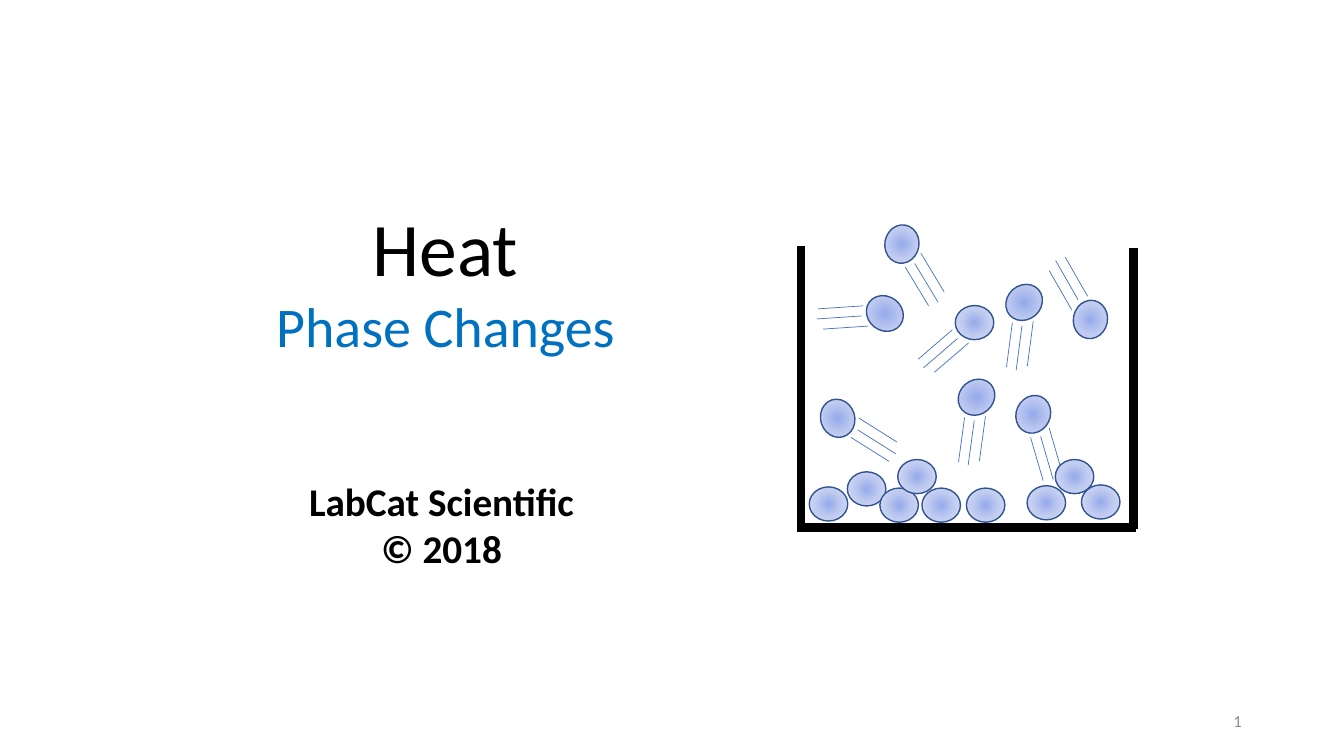
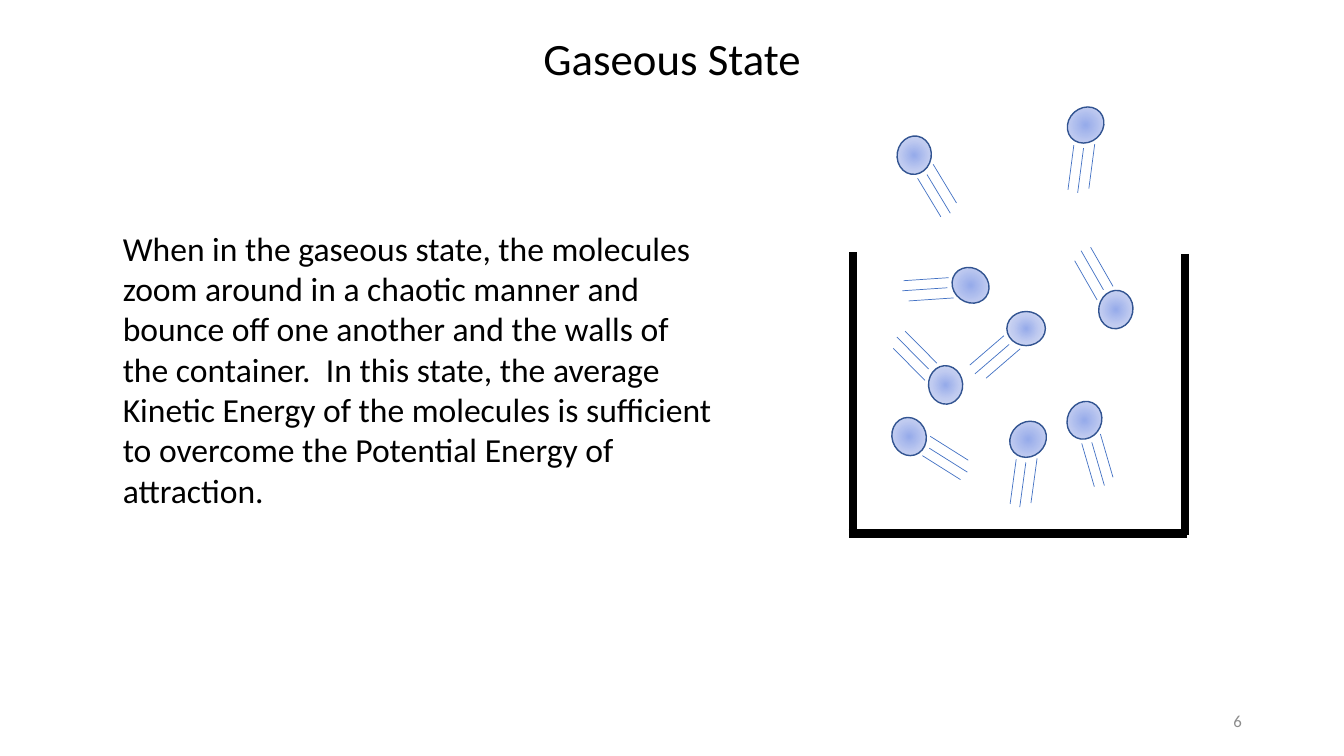
from copy import deepcopy
from dataclasses import dataclass
from math import cos, radians, sin

from lxml import etree
from pptx import Presentation
from pptx.dml.color import RGBColor
from pptx.enum.shapes import MSO_CONNECTOR as CONNECTOR, MSO_SHAPE as SHAPE
from pptx.enum.text import MSO_ANCHOR as ANCHOR, MSO_AUTO_SIZE as AUTO, PP_ALIGN as ALIGN
from pptx.oxml import parse_xml
from pptx.oxml.ns import qn
from pptx.util import Cm, Pt

BLACK = RGBColor(0x00, 0x00, 0x00)
BLUE = RGBColor(0x00, 0x70, 0xC0)
GRAY = RGBColor(0x8C, 0x8C, 0x8C)
OUTLINE = RGBColor(0x32, 0x54, 0x91)
TRAIL = RGBColor(0x44, 0x72, 0xC4)
GLOW = (
    (0, RGBColor(0x96, 0xAB, 0xEA)),
    (50, RGBColor(0xC0, 0xCB, 0xF0)),
    (100, RGBColor(0xE0, 0xE5, 0xF7)),
)
FONT = "Calibri"

MOLECULE_W, MOLECULE_H = 0.97, 0.86
TRAIL_STARTS = ((-0.43, 0.4), (-0.56, 0.18), (-0.15, 0.51))
TRAIL_DX, TRAIL_DY = -0.86, 0.74
BEAKER_W, BEAKER_H = 8.38, 7.09


@dataclass(frozen=True)
class Box:
    x: float
    y: float
    w: float
    h: float


@dataclass(frozen=True)
class Line:
    text: str
    size: float
    color: RGBColor = BLACK


@dataclass(frozen=True)
class Molecule:
    x: float
    y: float
    angle: float = 0
    moving: bool = True


NUMBER_BOX = Box(23.93, 17.65, 7.62, 1.02)

BOILING = [
    Molecule(24.56, 8.13),
    Molecule(27.48, 8.05, 100.9),
    Molecule(21.11, 10.54, 252.9),
    Molecule(26.04, 10.44, 294.5),
    Molecule(24.61, 10.01, 318.5),
    Molecule(22.3, 7.9, 36.9),
    Molecule(25.81, 7.62, 318.2),
    Molecule(22.73, 6.15, 279.6),
]
SETTLED = [
    Molecule(x, y, moving=False)
    for x, y in (
        (20.88, 12.7), (21.84, 12.32), (22.66, 12.73),
        (23.72, 12.73), (23.11, 12.01), (24.84, 12.73),
        (26.37, 12.67), (27.74, 12.65), (27.08, 12.01),
    )
]
GAS = [
    Molecule(25.86, 8.28),
    Molecule(28.12, 7.8, 100.9),
    Molecule(22.91, 11, 252.9),
    Molecule(23.83, 9.7, 86),
    Molecule(27.33, 10.59, 294.5),
    Molecule(25.91, 11.07, 318.5),
    Molecule(24.46, 7.19, 36.9),
    Molecule(27.36, 3.15, 318.2),
    Molecule(23.04, 3.91, 279.6),
]


def make_glow():
    grad = parse_xml(
        '<a:gradFill xmlns:a="http://schemas.openxmlformats.org/drawingml/2006/main">'
        '<a:gsLst/><a:path path="circle">'
        '<a:fillToRect l="50000" t="50000" r="50000" b="50000"/></a:path></a:gradFill>'
    )
    stops = grad.find(qn("a:gsLst"))
    for pos, color in GLOW:
        gs = etree.SubElement(stops, qn("a:gs"), pos=str(pos * 1000))
        etree.SubElement(gs, qn("a:srgbClr"), val=str(color))
    return grad


GLOW_FILL = make_glow()


def write(sp, box: Box, lines: list[Line], *, align=ALIGN.LEFT,
          anchor=ANCHOR.TOP, bold: bool = False) -> None:
    sp.left, sp.top, sp.width, sp.height = (Cm(v) for v in (box.x, box.y, box.w, box.h))
    tf = sp.text_frame
    tf.word_wrap = True
    tf.auto_size = AUTO.NONE
    tf.vertical_anchor = anchor
    for i, line in enumerate(lines):
        p = tf.add_paragraph() if i else tf.paragraphs[0]
        p.alignment = align
        p.space_before = Pt(0)
        pr = p._p.get_or_add_pPr()
        pr.set("marL", "0")
        pr.set("indent", "0")
        etree.SubElement(pr, qn("a:buNone"))
        r = p.add_run()
        r.text = line.text
        r.font.name = FONT
        r.font.size = Pt(line.size)
        r.font.bold = bold
        r.font.color.rgb = line.color


def add_line(shapes, x1: float, y1: float, x2: float, y2: float,
             color: RGBColor, width: float) -> None:
    c = shapes.add_connector(CONNECTOR.STRAIGHT, Cm(x1), Cm(y1), Cm(x2), Cm(y2))
    c.line.color.rgb = color
    c.line.width = Pt(width)
    etree.SubElement(c._element.spPr, qn("a:effectLst"))


def add_beaker(s, x: float, y: float) -> None:
    shapes = s.shapes.add_group_shape().shapes
    right, bottom = x + BEAKER_W, y + BEAKER_H
    for ends in (
        (x, y, x, bottom),
        (x - 0.1, bottom, right + 0.05, bottom),
        (right, y + 0.05, right, bottom + 0.05),
    ):
        add_line(shapes, *ends, BLACK, 6)


def add_molecule(s, m: Molecule) -> None:
    shapes = s.shapes.add_group_shape().shapes if m.moving else s.shapes
    sp = shapes.add_shape(SHAPE.OVAL, Cm(m.x - MOLECULE_W / 2), Cm(m.y - MOLECULE_H / 2),
                          Cm(MOLECULE_W), Cm(MOLECULE_H))
    sp.rotation = m.angle
    sp.shadow.inherit = False
    sp.line.color.rgb = OUTLINE
    sp.line.width = Pt(1)
    sp.fill.background()
    pr = sp._element.spPr
    pr.replace(pr.find(qn("a:noFill")), deepcopy(GLOW_FILL))
    if not m.moving:
        return

    c, n = cos(radians(m.angle)), sin(radians(m.angle))

    def turn(x: float, y: float) -> tuple[float, float]:
        return m.x + x * c - y * n, m.y + x * n + y * c

    for x, y in TRAIL_STARTS:
        add_line(shapes, *turn(x, y), *turn(x + TRAIL_DX, y + TRAIL_DY), TRAIL, 0.5)


def add_slide(prs, layout: int, number: int, beaker: tuple[float, float],
              molecules: list[Molecule]):
    s = prs.slides.add_slide(prs.slide_layouts[layout])
    add_beaker(s, *beaker)
    for m in molecules:
        add_molecule(s, m)
    write(s.shapes.add_textbox(0, 0, 0, 0), NUMBER_BOX, [Line(str(number), 12, GRAY)],
          align=ALIGN.RIGHT, anchor=ANCHOR.MIDDLE)
    return s


def main() -> None:
    prs = Presentation()
    prs.slide_width, prs.slide_height = Cm(33.87), Cm(19.05)

    s = add_slide(prs, 0, 1, (20.19, 6.2), BOILING + SETTLED)
    write(s.shapes.title, Box(4.34, 4.93, 13.77, 4.27),
          [Line("Heat", 54), Line("Phase Changes", 40, BLUE)], align=ALIGN.CENTER)
    write(s.placeholders[1], Box(6.53, 11.91, 9.19, 2.64),
          [Line("LabCat Scientific", 28), Line("© 2018", 28)], align=ALIGN.CENTER, bold=True)

    s = add_slide(prs, 1, 6, (21.49, 6.35), GAS)
    write(s.shapes.title, Box(8.43, 0.64, 17.02, 1.63),
          [Line("Gaseous State", 32)], align=ALIGN.CENTER)
    write(s.placeholders[1], Box(2.84, 5.61, 15.47, 7.44), [Line(
        "When in the gaseous state, the molecules zoom around in a chaotic manner and "
        "bounce off one another and the walls of the container.  In this state, the "
        "average Kinetic Energy of the molecules is sufficient to overcome the "
        "Potential Energy of attraction.", 24)])

    prs.save("out.pptx")


if __name__ == "__main__":
    main()
